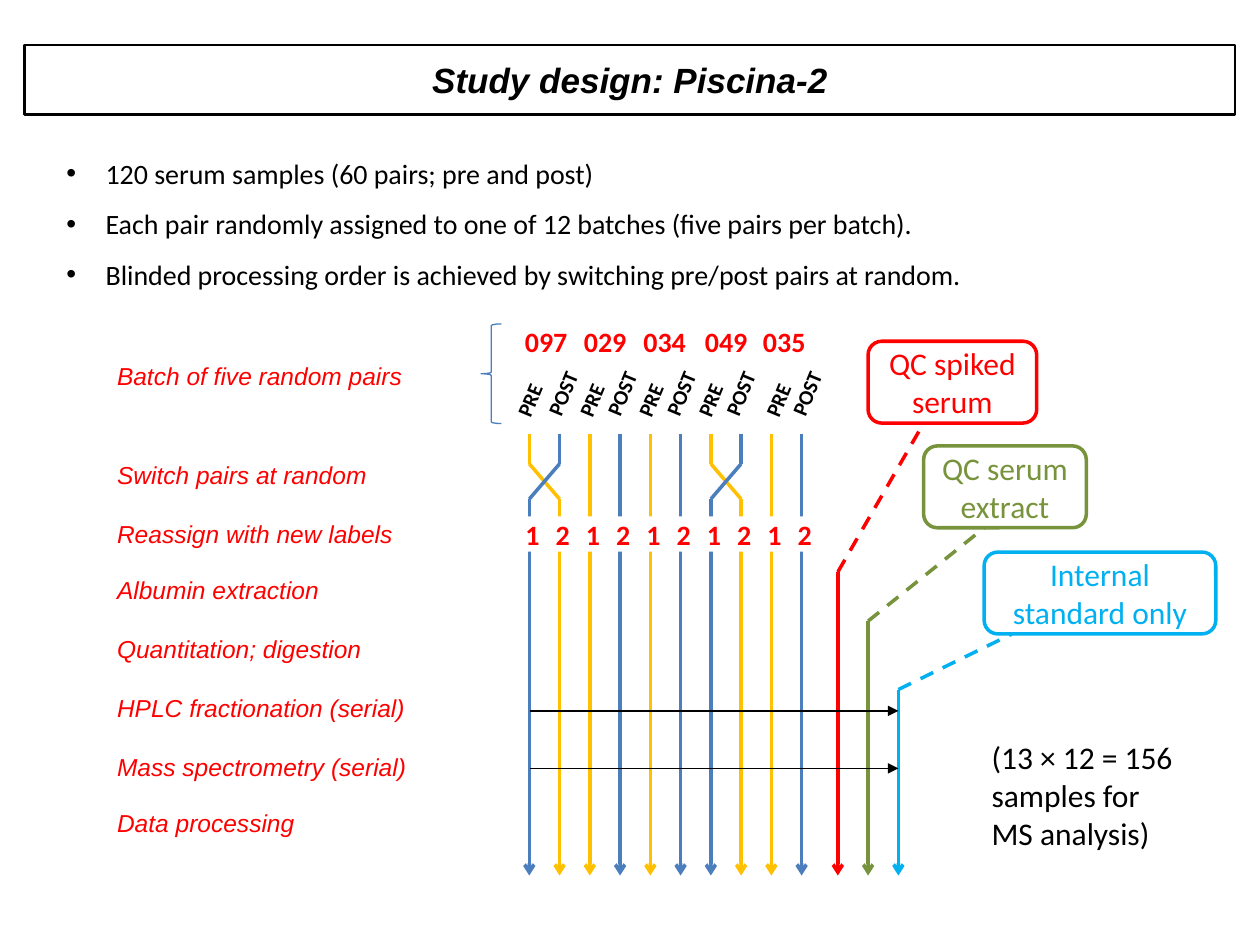
from lxml.etree import SubElement as Sub
from pptx import Presentation
from pptx.dml.color import RGBColor
from pptx.enum.dml import MSO_LINE
from pptx.enum.shapes import MSO_CONNECTOR as Con, MSO_SHAPE as Kind
from pptx.enum.text import MSO_ANCHOR as Anchor, PP_ALIGN as Align
from pptx.oxml.ns import qn
from pptx.util import Cm, Pt

RED, GREEN, CYAN = "FF0000", "77933C", "00B0F0"
BLUE, GOLD, BLACK, WHITE = "4B7EBC", "FFC000", "000000", "FFFFFF"


def rgb(code):
    return RGBColor.from_string(code)


def write(shape, *lines, size=18, font="Calibri", color=BLACK, bold=False,
          italic=False, align=Align.LEFT, anchor=Anchor.MIDDLE, wrap=True,
          space=None, bullet=False):
    """Fill a shape with one paragraph per line, all in the same format."""
    frame = shape.text_frame
    frame.word_wrap = wrap
    frame.vertical_anchor = anchor
    for i, line in enumerate(lines):
        para = frame.add_paragraph() if i else frame.paragraphs[0]
        para.alignment = align
        if space:
            para.line_spacing = space
        if bullet:
            props = para._p.get_or_add_pPr()
            props.set("marL", str(Cm(0.79)))
            props.set("indent", str(-Cm(0.79)))
            Sub(props, qn("a:buFont"), typeface="Arial")
            Sub(props, qn("a:buChar"), char="•")
        run = para.add_run()
        run.text = line
        face = run.font
        face.size, face.name = Pt(size), font
        face.bold, face.italic = bold, italic
        face.color.rgb = rgb(color)


class Page:
    def __init__(self, deck):
        self.slide = deck.slides.add_slide(deck.slide_layouts[6])
        self.width = 2

    def shape(self, kind, x, y, w, h, line=None, fill=None, width=None):
        item = self.slide.shapes.add_shape(kind, Cm(x), Cm(y), Cm(w), Cm(h))
        item.shadow.inherit = False
        if fill:
            item.fill.solid()
            item.fill.fore_color.rgb = rgb(fill)
        else:
            item.fill.background()
        if line:
            item.line.color.rgb = rgb(line)
            item.line.width = Pt(width or self.width)
        else:
            item.line.fill.background()
        return item

    def text(self, x, y, w, h, *lines, turn=0, **style):
        box = self.slide.shapes.add_textbox(Cm(x), Cm(y), Cm(w), Cm(h))
        box.rotation = turn
        write(box, *lines, **style)

    def line(self, x1, y1, x2, y2, color, width=None, dash=False, head=None):
        item = self.slide.shapes.add_connector(
            Con.STRAIGHT, Cm(x1), Cm(y1), Cm(x2), Cm(y2))
        item.line.color.rgb = rgb(color)
        item.line.width = Pt(width or self.width)
        if dash:
            item.line.dash_style = MSO_LINE.DASH
        props = item._element.spPr
        if head:
            Sub(props.find(qn("a:ln")), qn("a:tailEnd"), type=head)
        Sub(props, qn("a:effectLst"))


def add_lanes(page):
    """Draw the sample lanes, crossing those of each switched pair."""
    left, step = 10.67, 0.61
    top, cross, join, end = 8.74, 9.35, 10.06, 17.65
    for pair in range(5):
        a = left + 2 * pair * step
        b = a + step
        if pair in (0, 3):
            for x, to, color in ((a, b, GOLD), (b, a, BLUE)):
                page.line(x, top, x, cross, color)
                page.line(x, cross, to, join, color)
                page.line(to, join, to, end, color, head="arrow")
        else:
            page.line(a, top, a, end, GOLD, head="arrow")
            page.line(b, top, b, end, BLUE, head="arrow")
    for i in range(10):
        box = page.shape(Kind.RECTANGLE, 10.34 + i * step, 10.41, 0.61, 0.71,
                         fill=WHITE)
        write(box, str(i % 2 + 1), size=16, bold=True, color=RED,
              align=Align.CENTER)


def add_heads(page):
    heads = (("097", 10.11, 10.08, 10.62), ("029", 11.3, 11.33, 11.81),
             ("034", 12.5, 12.52, 13), ("049", 13.74, 13.72, 14.2),
             ("035", 14.91, 15.09, 15.54))
    tilt = dict(size=12, bold=True, turn=292.4, wrap=False, anchor=Anchor.TOP)
    for name, x, pre, post in heads:
        page.text(x, 6.53, 1.8, 0.71, name, size=16, bold=True, color=RED,
                  align=Align.CENTER)
        page.text(pre, 7.67, 1.19, 0.76, "PRE", **tilt)
        page.text(post, 7.54, 1.45, 0.76, "POST", **tilt)
    page.shape(Kind.LEFT_BRACE, 9.7, 6.53, 0.41, 2.01, line=BLUE, width=0.75)


def add_steps(page):
    steps = (("Batch of five random pairs", 7.21),
             ("Switch pairs at random", 9.22),
             ("Reassign with new labels", 10.41),
             ("Albumin extraction", 11.53),
             ("Quantitation; digestion", 12.73),
             ("HPLC fractionation (serial)", 13.92),
             ("Mass spectrometry (serial)", 15.11),
             ("Data processing", 16.23))
    for name, y in steps:
        page.text(2.11, y, 7.8, 0.71, name, size=14, font="Arial", color=RED,
                  italic=True)


def add_controls(page):
    """Draw each control box, its dashed link and its lane."""
    controls = (
        ("QC spiked serum", RED, (17.5, 6.88, 3.4), 16.89, 11.53, 18.62, 8.53),
        ("QC serum extract", GREEN, (18.62, 8.99, 3.28), 17.5, 12.52, 19.84,
         10.64),
        ("Internal standard only", CYAN, (19.84, 11.13, 4.67), 18.11, 13.9,
         20.4, 12.78))
    for name, color, (x, y, w), lane, top, to, low in controls:
        page.line(lane, top, lane, 17.65, color, head="arrow")
        page.line(lane, top, to, low, color, dash=True)
        box = page.shape(Kind.ROUNDED_RECTANGLE, x, y, w, 1.65, line=color,
                         fill=WHITE)
        write(box, name, color=color, align=Align.CENTER)
    for y in (14.33, 15.49):
        page.line(10.69, y, 18.11, y, BLACK, width=0.75, head="triangle")


def main():
    deck = Presentation()
    deck.slide_width, deck.slide_height = Cm(25.4), Cm(19.05)
    page = Page(deck)
    title = page.shape(Kind.RECTANGLE, 0.5, 0.91, 24.4, 1.4, line=BLACK,
                       width=1.5)
    write(title, "Study design: Piscina-2", size=20, font="Arial", bold=True,
          italic=True, align=Align.CENTER)
    page.text(1.09, 2.69, 23.01, 4.37,
              "120 serum samples (60 pairs; pre and post)",
              "Each pair randomly assigned to one of 12 batches "
              "(five pairs per batch).",
              "Blinded processing order is achieved by switching "
              "pre/post pairs at random.",
              size=16, align=Align.JUSTIFY, anchor=Anchor.TOP, space=1.5,
              bullet=True)
    add_lanes(page)
    add_heads(page)
    add_steps(page)
    add_controls(page)
    page.text(19.74, 14.76, 4.44, 2.57,
              "(13 × 12 = 156 samples for MS analysis)", anchor=Anchor.TOP)
    deck.save("out.pptx")


if __name__ == "__main__":
    main()
